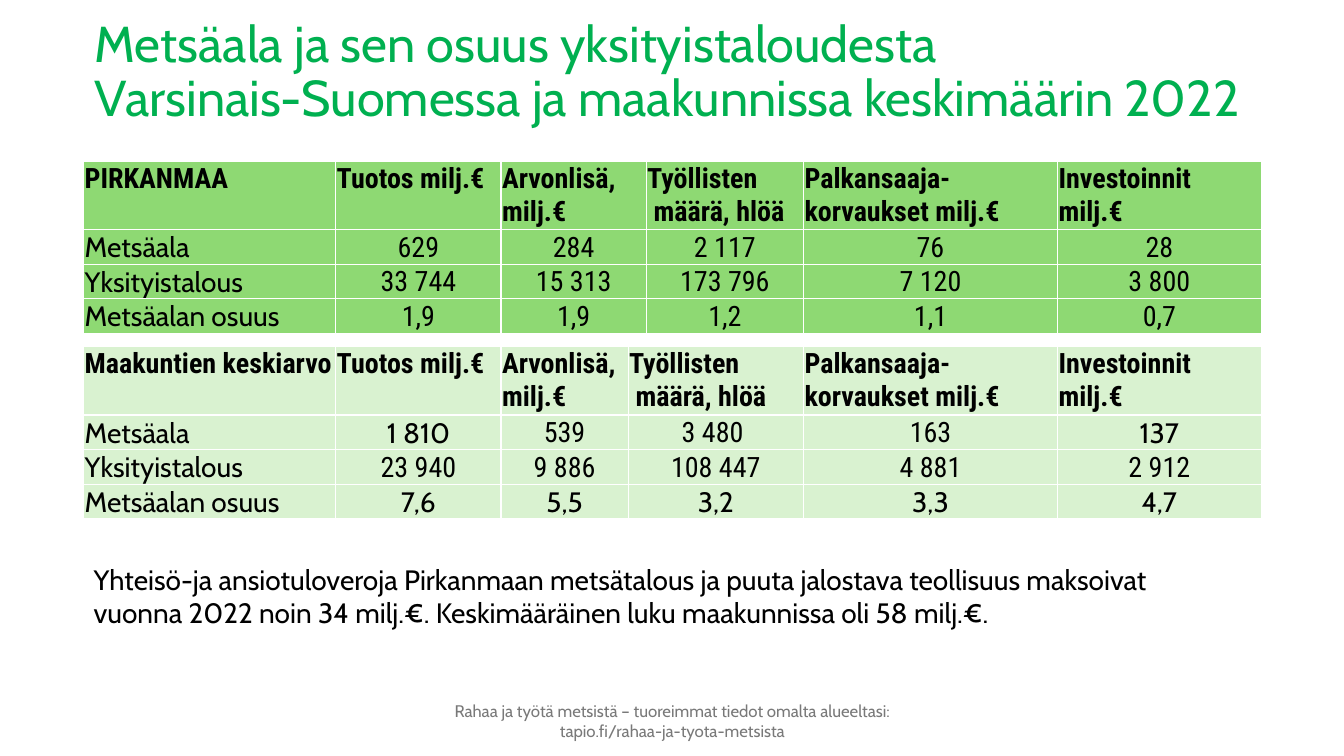
from lxml.etree import SubElement
from pptx import Presentation
from pptx.dml.color import RGBColor
from pptx.enum.text import MSO_ANCHOR, PP_ALIGN
from pptx.oxml import parse_xml
from pptx.oxml.ns import nsdecls
from pptx.util import Inches, Pt

BODY_FONT = "Cabin"
FIGURE_FONT = "Roboto Condensed"
HEADINGS = ["Tuotos milj.€", "Arvonlisä, milj.€", "Työllisten\n määrä, hlöä",
            "Palkansaaja-korvaukset milj.€", "Investoinnit\nmilj.€"]
SECTORS = ["Metsäala", "Yksityistalous", "Metsäalan osuus"]
PIRKANMAA = [["629", "284", "2 117", "76", "28"],
             ["33 744", "15 313", "173 796", "7 120", "3 800"],
             ["1,9", "1,9", "1,2", "1,1", "0,7"]]
AVERAGE = [["1 810", "539", "3 480 ", "163", "137"],
           ["23 940", "9 886", "108 447", "4 881", "2 912"],
           ["7,6", "5,5", "3,2", "3,3", "4,7"]]
AVERAGE_BODY_FONT = {(1, 1), (1, 5)} | {(3, column) for column in range(1, 6)}


def rgb(value):
    return RGBColor.from_string(value)


def style(paragraph, font, size, colour, bold=False, align=PP_ALIGN.LEFT):
    paragraph.alignment = align
    paragraph.font.name = font
    paragraph.font.size = Pt(size)
    paragraph.font.bold = bold
    paragraph.font.color.rgb = rgb(colour)


def add_text(slide, box, text, size, colour, anchor=MSO_ANCHOR.TOP,
             align=PP_ALIGN.LEFT, spacing=1.0):
    frame = slide.shapes.add_textbox(*map(Inches, box)).text_frame
    frame.word_wrap = True
    frame.vertical_anchor = anchor
    frame.text = text
    for paragraph in frame.paragraphs:
        style(paragraph, BODY_FONT, size, colour, align=align)
        paragraph.line_spacing = spacing


def add_borders(cell, colour):
    properties = cell._tc.get_or_add_tcPr()
    for position, side in enumerate(("lnL", "lnR", "lnT", "lnB")):
        border = parse_xml(f'<a:{side} {nsdecls("a")} w="12700"/>')
        fill = SubElement(border, border.tag.replace(side, "solidFill"))
        SubElement(fill, border.tag.replace(side, "srgbClr"), val=colour)
        properties.insert(position, border)


def fill_cell(cell, text, font, colour, is_heading, align):
    cell.text = text
    cell.margin_left = cell.margin_right = cell.margin_top = Inches(0.01)
    cell.margin_bottom = 0
    cell.vertical_anchor = MSO_ANCHOR.TOP if is_heading else MSO_ANCHOR.BOTTOM
    cell.fill.solid()
    cell.fill.fore_color.rgb = rgb(colour)
    for paragraph in cell.text_frame.paragraphs:
        style(paragraph, font, 20, "000000", is_heading, align)
    add_borders(cell, "FFFFFF")


def add_region_table(slide, box, region, figures, widths, colour, body_font_cells=()):
    rows = [[region] + HEADINGS]
    rows += [[sector] + values for sector, values in zip(SECTORS, figures)]
    table = slide.shapes.add_table(len(rows), len(widths), *map(Inches, box)).table
    table.first_row = table.horz_banding = False
    for column, width in zip(table.columns, widths):
        column.width = Inches(width)
    for r, values in enumerate(rows):
        table.rows[r].height = Inches(0.34 if r else 0.65)
        for c, text in enumerate(values):
            is_label = r > 0 and c == 0
            font = BODY_FONT if is_label or (r, c) in body_font_cells else FIGURE_FONT
            align = PP_ALIGN.CENTER if r and c else PP_ALIGN.LEFT
            fill_cell(table.cell(r, c), text, font, colour, r == 0, align)


def main():
    deck = Presentation()
    deck.slide_width, deck.slide_height = Inches(13.33), Inches(7.5)
    slide = deck.slides.add_slide(deck.slide_layouts[6])
    add_text(slide, (4.32, 6.95, 4.7, 0.4),
             "Rahaa ja työtä metsistä – tuoreimmat tiedot omalta alueeltasi: "
             "tapio.fi/rahaa-ja-tyota-metsista",
             12, "797979", MSO_ANCHOR.MIDDLE, PP_ALIGN.CENTER)
    add_text(slide, (0.84, 0, 12.19, 1.45),
             "Metsäala ja sen osuus yksityistaloudesta\n"
             "Varsinais-Suomessa ja maakunnissa keskimäärin 2022",
             36, "00B050", MSO_ANCHOR.MIDDLE, spacing=0.9)
    add_region_table(slide, (0.83, 1.6, 11.68, 1.69), "PIRKANMAA", PIRKANMAA,
                     [2.5, 1.64, 1.44, 1.56, 2.52, 2.02], "8ED973")
    add_region_table(slide, (0.83, 3.44, 11.68, 1.69), "Maakuntien keskiarvo", AVERAGE,
                     [2.5, 1.64, 1.26, 1.74, 2.52, 2.02], "D9F2D0", AVERAGE_BODY_FONT)
    add_text(slide, (0.83, 5.53, 10.9, 0.77),
             "Yhteisö-ja ansiotuloveroja Pirkanmaan metsätalous ja puuta jalostava "
             "teollisuus maksoivat vuonna 2022 noin 34 milj.€. Keskimääräinen luku "
             "maakunnissa oli 58 milj.€.", 20, "000000")
    deck.save("out.pptx")


if __name__ == "__main__":
    main()
